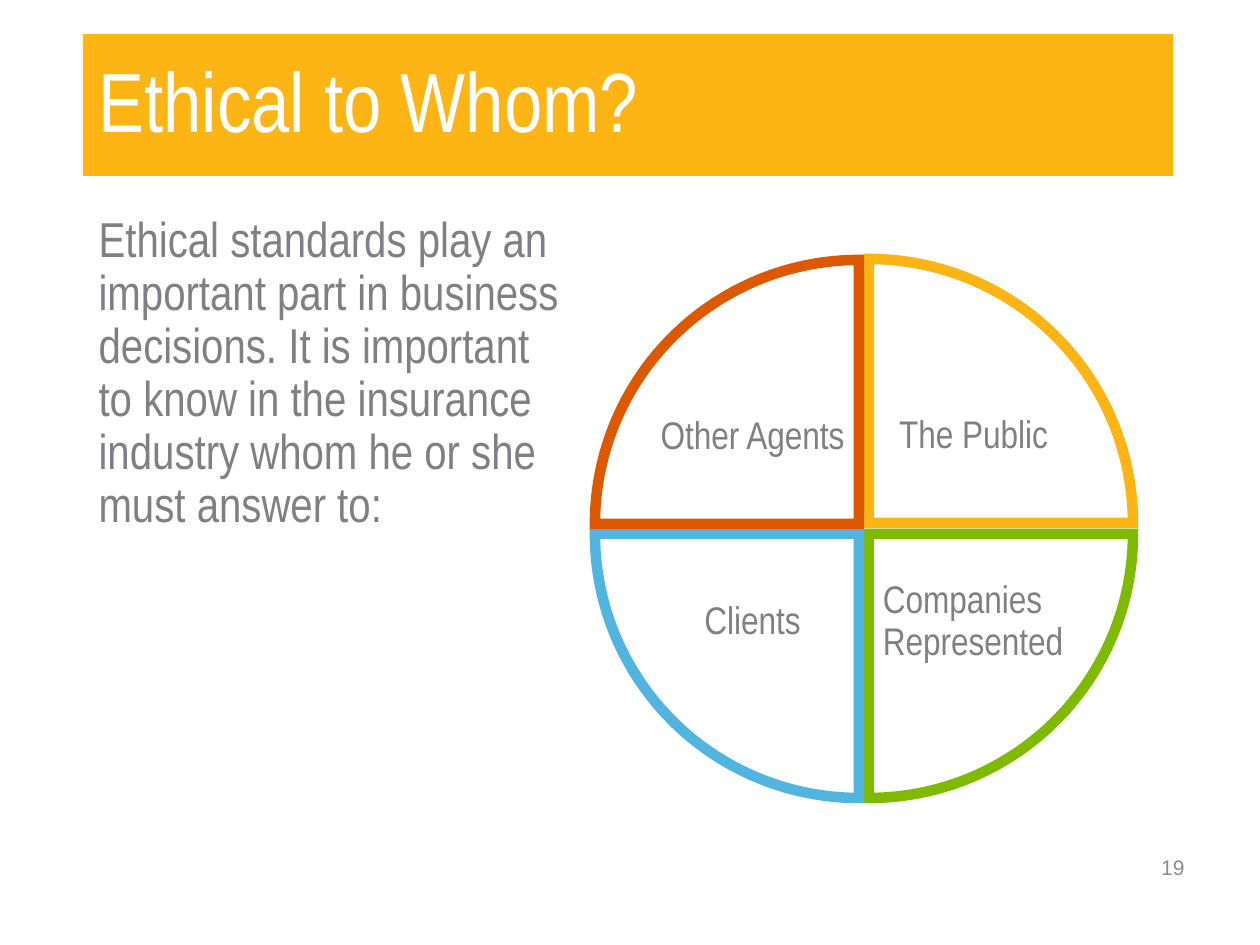
"""Build the "Ethical to Whom?" slide with a four-part circle."""
from lxml import etree
from pptx import Presentation
from pptx import util as u
from pptx.dml.color import RGBColor
from pptx.enum import shapes, text

PX = 914400 / 126
GREY, GOLD, WHITE = "808084", "FCB514", "FFFFFF"
LEFT, MID, RIGHT = text.PP_ALIGN.LEFT, text.PP_ALIGN.CENTER, text.PP_ALIGN.RIGHT


def rgb(code):
    return RGBColor.from_string(code)


def write(shape, words, size, color, align, font="Arial Narrow", inset=None):
    frame = shape.text_frame
    frame.word_wrap = True
    frame.auto_size = text.MSO_AUTO_SIZE.NONE
    frame.vertical_anchor = text.MSO_ANCHOR.MIDDLE
    if inset is not None:
        frame.margin_left = frame.margin_right = inset
        frame.margin_top = frame.margin_bottom = inset
    frame.text = words
    para = frame.paragraphs[0]
    para.alignment = align
    para.line_spacing = 0.9
    para.space_before = u.Pt(0)
    para.font.size = u.Pt(size)
    para.font.name = font
    para.font.color.rgb = rgb(color)
    return para


deck = Presentation()
deck.slide_width, deck.slide_height = u.Inches(10), u.Inches(7.5)
slide = deck.slides.add_slide(deck.slide_layouts[1])
items = slide.shapes
title, body = items.title, slide.placeholders[1]

band = items.add_shape(shapes.MSO_SHAPE.RECTANGLE,
                       *[int(v * PX) for v in (83, 34, 1090, 142)])
band.shadow.inherit = False
band.fill.solid()
band.fill.fore_color.rgb = rgb(GOLD)
band.line.fill.background()
title.element.addprevious(band.element)

for hold, box in ((title, (86, 20, 1086, 171)), (body, (86, 209, 494, 426))):
    hold.left, hold.top, hold.width, hold.height = [int(v * PX) for v in box]
write(title, "Ethical to Whom?", 48, WHITE, LEFT)
para = write(body, "Ethical standards play an important part in business decisions. "
             "It is important to know in the insurance industry whom he or she "
             "must answer to:", 28, GREY, LEFT)
body.text_frame.vertical_anchor = text.MSO_ANCHOR.TOP
props = para._p.get_or_add_pPr()
props.set("marL", "0")
props.set("indent", "0")
bare = etree.Element(props.tag.replace("pPr", "buNone"))
props.find("{*}defRPr").addprevious(bare)

parts = [
    ("The Public", GOLD, 605, 259, 162, 0, 876, 357, MID),
    ("Companies Represented", "7FBA00", 605, 270, 0, 54, 879, 543, LEFT),
    ("Clients", "51B5E0", 595, 270, 54, 108, 655, 543, MID),
    ("Other Agents", "DD5900", 595, 260, 108, 162, 655, 358, MID),
]
for words, color, x, y, start, end, left, top, align in parts:
    pie = items.add_shape(shapes.MSO_SHAPE.PIE,
                          *[int(v * PX) for v in (x, y, 528, 528)])
    pie.shadow.inherit = False
    pie.adjustments[0], pie.adjustments[1] = start, end
    pie.fill.solid()
    pie.fill.fore_color.rgb = rgb(WHITE)
    pie.line.color.rgb = rgb(color)
    pie.line.width = u.Pt(6)
    edge = pie.line._get_or_add_ln()
    etree.SubElement(edge, edge.tag[:-2] + "miter", lim="800000")
    label = items.add_textbox(*[int(v * PX) for v in (left, top, 195, 158)])
    write(label, words, 22, GREY, align, inset=u.Inches(0.03))

number = items.add_textbox(*[int(v * PX) for v in (903, 842, 294, 50)])
write(number, "19", 12, "8C8C8C", RIGHT, "Arial").line_spacing = 1.0

deck.save("out.pptx")
